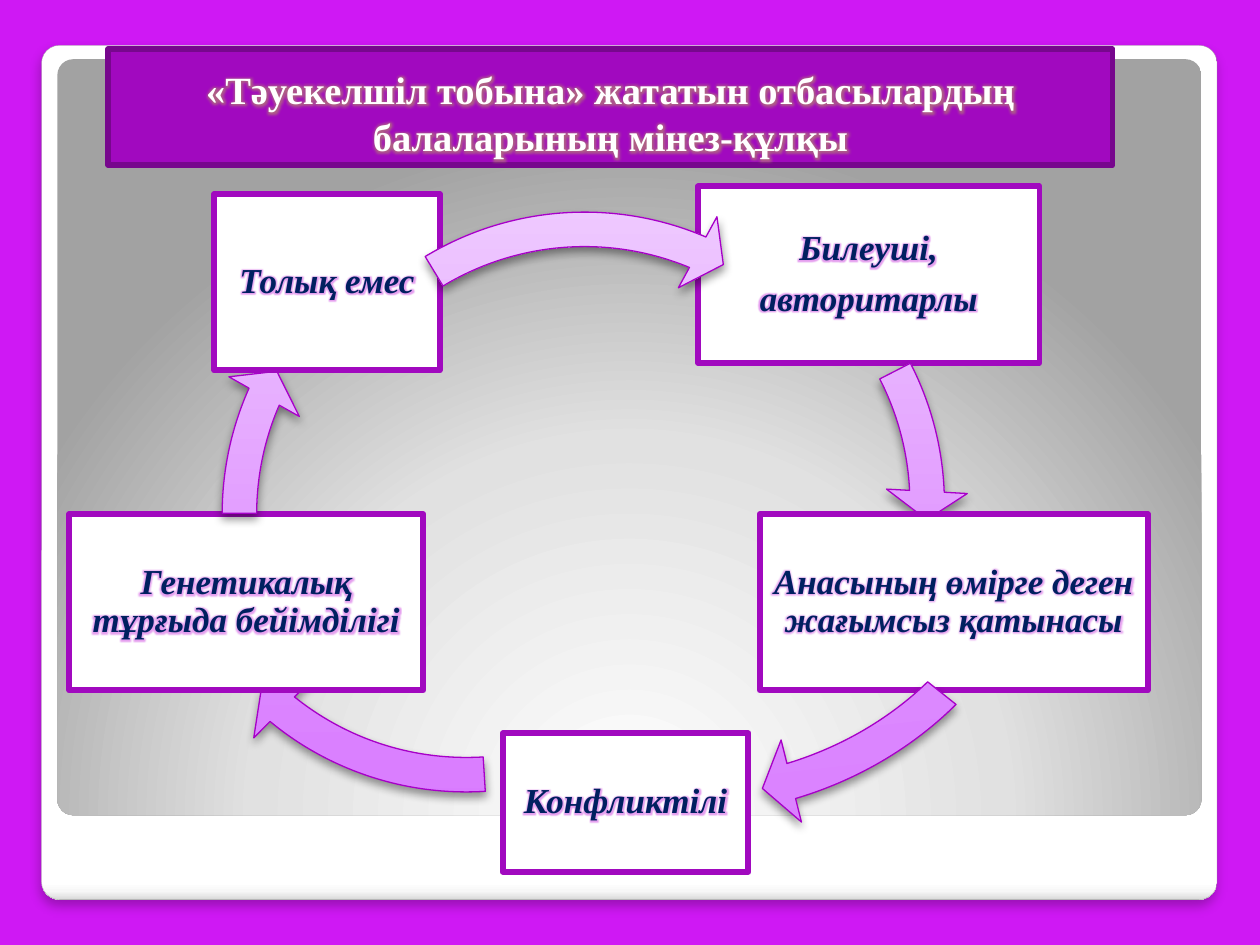
from dataclasses import dataclass
from lxml import etree
from pptx import Presentation
from pptx import util as u
from pptx.dml.color import RGBColor
from pptx.enum import shapes as kind, text as txt
from pptx.oxml.ns import qn


@dataclass(frozen=True)
class Theme:
    font: str = "Times New Roman"
    head: int = 22
    body: int = 20
    back: str = "CF18F4"
    white: str = "FFFFFF"
    ink: str = "002060"
    bar: str = "A109BF"
    edge: str = "77078D"
    rim: str = "A700C8"
    trim: str = "A4A4A4"
    shade: str = "000000"
    glow: str = "C010D8"
    gold: str = "C4E030"
    card: tuple = ((0, "FFFFFF"), (98, "FFFFFF"), (99, "F7F7F7"), (100, "DADADA"))
    pane: tuple = ((0, "FFFFFF"), (55, "E1E1E1"), (100, "A2A2A2"))
    arc: tuple = ((0, "D97BFF"), (25, "DC88FF"), (100, "EFCBFF"))


T = Theme()
COLS, ROWS = 100, 75
UNIT = u.Inches(10) / COLS


def rgb(hue):
    return RGBColor.from_string(hue)


def node(top, tag, **attrs):
    return etree.SubElement(top, qn("a:" + tag), {k: str(v) for k, v in attrs.items()})


def tint(top, hue, alpha):
    node(node(top, "srgbClr", val=hue), "alpha", val=alpha * 1000)


def spot(box, x, y, w, h):
    return [u.Emu(round(n * UNIT)) for n in (box[0] + x, box[1] + y, w, h)]


def paint(shape, fill, line, width):
    shape.fill.solid()
    shape.fill.fore_color.rgb = rgb(fill)
    shape.line.color.rgb = rgb(line)
    shape.line.width = u.Pt(width)


def blend(shape, stops, turn=None):
    shape.fill.background()
    old = shape.element.spPr.find(qn("a:noFill"))
    grad = etree.Element(qn("a:gradFill"), rotWithShape="1")
    row = node(grad, "gsLst")
    for pos, hue in stops:
        node(node(row, "gs", pos=pos * 1000), "srgbClr", val=hue)
    if turn is None:
        ring = node(grad, "path")
        ring.set("path", "circle")
        node(ring, "fillToRect", l=50000, t=175000, r=50000, b=-75000)
    else:
        node(grad, "lin", ang=turn * 60000, scaled=0)
    old.getparent().replace(old, grad)


def drop(shape, alpha, blur, dist):
    shape.shadow.inherit = False
    fx = shape.element.spPr.find(qn("a:effectLst"))
    cast = node(fx, "outerShdw", blurRad=u.Pt(blur), dist=u.Pt(dist),
                dir=90 * 60000, rotWithShape=0)
    tint(cast, T.shade, alpha)


def style(frame, size, hue, glow, slant):
    for para in frame.paragraphs:
        para.alignment = txt.PP_ALIGN.CENTER
        for run in para.runs:
            font = run.font
            font.name, font.size = T.font, u.Pt(size)
            font.bold, font.italic = True, slant
            font.color.rgb = rgb(hue)
            fx = etree.Element(qn("a:effectLst"))
            tint(node(fx, "glow", rad=u.Pt(5)), glow, 40)
            font.color.rgb = rgb(hue)
            run.font.fill.fore_color.rgb = rgb(hue)
            run._r.rPr.find(qn("a:solidFill")).addnext(fx)


def frame(slide, box):
    w, h = box[2:]
    card = slide.shapes.add_shape(kind.MSO_SHAPE.ROUNDED_RECTANGLE, *spot(box, 0, 0, w, h))
    pane = slide.shapes.add_shape(kind.MSO_SHAPE.ROUNDED_RECTANGLE,
                                  *spot(box, 1.25, 1.1, w - 2.5, 60))
    for part in (card, pane):
        part.adjustments[0] = 0.021
    blend(card, T.card, 90)
    card.line.color.rgb = rgb(T.trim)
    card.line.width = u.Pt(0.16)
    drop(card, 25, 6, 4)
    blend(pane, T.pane)
    pane.line.fill.background()
    pane.shadow.inherit = False
    return pane


def banner(slide, box, below, words):
    title = slide.shapes.title
    below.element.addnext(title.element)
    title.left, title.top, title.width, title.height = spot(box, 0, 0, *box[2:])
    paint(title, T.bar, T.edge, 3.35)
    body = title.text_frame
    body.text = words
    body.word_wrap = True
    body.auto_size = txt.MSO_AUTO_SIZE.NONE
    body.vertical_anchor = txt.MSO_ANCHOR.BOTTOM
    style(body, T.head, T.white, T.gold, False)


def label(slide, place, words):
    shape = slide.shapes.add_shape(kind.MSO_SHAPE.RECTANGLE, *place)
    paint(shape, T.white, T.bar, 3.35)
    shape.shadow.inherit = False
    body = shape.text_frame
    body.text = words
    body.word_wrap = True
    body.vertical_anchor = txt.MSO_ANCHOR.MIDDLE
    body.margin_left = body.margin_right = u.Inches(0.03)
    body.margin_top = body.margin_bottom = u.Inches(0.03)
    for para in body.paragraphs:
        para.line_spacing = 0.9
        para.space_after = u.Pt(T.body * 0.35)
    style(body, T.body, T.ink, T.glow, True)


def arrow(slide, place, end, start, turn):
    shape = slide.shapes.add_shape(kind.MSO_SHAPE.CIRCULAR_ARROW, *place)
    for i, val in enumerate((0.052, 3.36, end, start, 0.061)):
        shape.adjustments[i] = val
    shape.rotation = turn
    blend(shape, T.arc, 270)
    shape.line.color.rgb = rgb(T.rim)
    shape.line.width = u.Pt(0.75)
    drop(shape, 40, 5.2, 3)


def cycle(slide, box, steps):
    for words, place, ring, end, start, turn in steps:
        label(slide, spot(box, *place), words)
        arrow(slide, spot(box, *ring), end, start, turn)


RING = (52.6, 52.6)
STEPS = [
    ("Билеуші,\nавторитарлы", (50.4, 4.8, 27.1, 14),
     (19.2, 3.7, *RING), 214.51, 199.7, 0),
    ("Анасының өмірге деген жағымсыз қатынасы", (55.3, 30.8, 30.8, 14),
     (19, 1.6, 61.4, 55), 46.2, 26.96, 353.5),
    ("Конфликтілі", (34.9, 48.2, 19.5, 11),
     (5.7, 2.1, *RING), 77.52, 51.86, 0),
    ("Генетикалық тұрғыда бейімділігі", (0.5, 30.8, 28.1, 14),
     (10.8, 4.5, *RING), 122.27, 108.09, 0),
    ("Толық емес", (12, 5.4, 17.9, 14),
     (15.1, 5, *RING), 175.73, 143.32, 0),
]


def main():
    deck = Presentation()
    deck.slide_width, deck.slide_height = spot((0, 0), 0, 0, COLS, ROWS)[2:]
    slide = deck.slides.add_slide(deck.slide_layouts[5])
    slide.background.fill.solid()
    slide.background.fill.fore_color.rgb = rgb(T.back)
    pane = frame(slide, (3.3, 3.6, 93.3, 67.8))
    banner(slide, (8.6, 3.9, 79.7, 9.2), pane,
           "«Тәуекелшіл тобына» жататын отбасылардың балаларының мінез-құлқы")
    cycle(slide, (5, 10, 90, 60), STEPS)
    deck.save("out.pptx")


if __name__ == "__main__":
    main()
